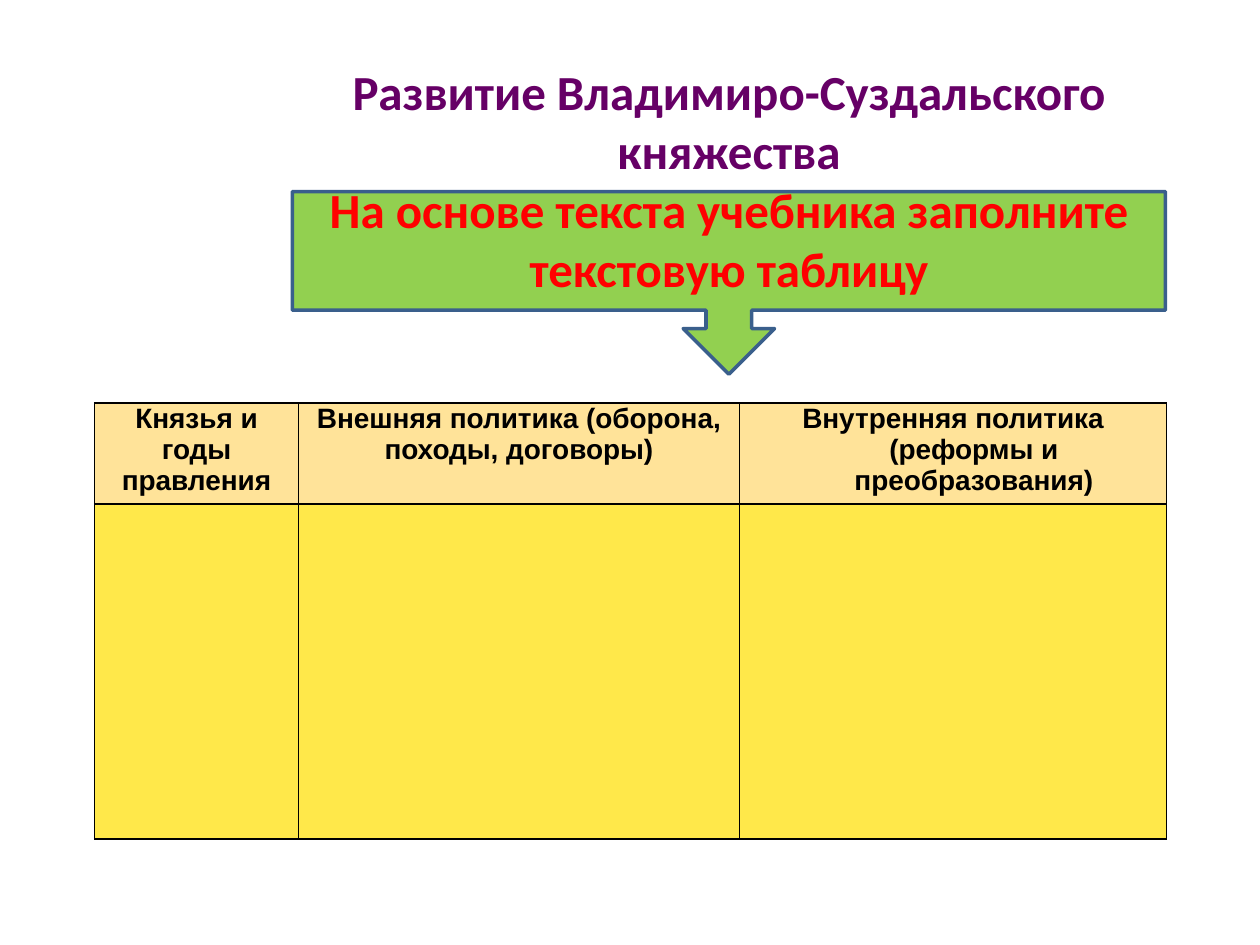
from pptx import Presentation
from pptx import util as u
from pptx.dml.color import RGBColor
from pptx.enum import shapes, text
from pptx.oxml import parse_xml
from pptx.oxml.ns import nsdecls

PURPLE = RGBColor(0x66, 0x00, 0x66)
RED = RGBColor(0xFF, 0x00, 0x00)
GREEN = RGBColor(0x92, 0xD0, 0x50)
BLUE = RGBColor(0x3A, 0x5F, 0x8C)
BLACK = RGBColor(0x00, 0x00, 0x00)
PEACH = RGBColor(0xFF, 0xE3, 0x99)
YELLOW = RGBColor(0xFF, 0xE8, 0x4A)

WIDTH, HEIGHT = 10, 7.5
COLUMNS, ROWS = 100, 75  # grid of the slide


class SlideBuilder:
    """Holds the style and the current slide; lengths are grid columns and rows."""

    title_font, table_font = "Calibri", "Arial"
    title_size, table_size = 28, 16

    def __init__(self, presentation):
        self.column = presentation.slide_width / COLUMNS
        self.row = presentation.slide_height / ROWS
        self.slide = presentation.slides.add_slide(presentation.slide_layouts[5])

    def box(self, left, top, width, height):
        return (round(left * self.column), round(top * self.row),
                round(width * self.column), round(height * self.row))

    def fill_paragraph(self, paragraph, words, font, size, color):
        paragraph.text = words
        paragraph.alignment = text.PP_ALIGN.CENTER
        paragraph.font.name = font
        paragraph.font.size = u.Pt(size)
        paragraph.font.bold = True
        paragraph.font.color.rgb = color

    def callout(self, *place):
        shape = self.slide.shapes.add_shape(
            shapes.MSO_SHAPE.DOWN_ARROW_CALLOUT, *self.box(*place))
        shape.shadow.inherit = False
        shape.fill.solid()
        shape.fill.fore_color.rgb = GREEN
        shape.line.color.rgb = BLUE
        shape.line.width = u.Pt(2)

    def title(self, lines, *place):
        title = self.slide.shapes.title
        title.left, title.top, title.width, title.height = self.box(*place)
        frame = title.text_frame
        frame.word_wrap = True
        frame.auto_size = text.MSO_AUTO_SIZE.SHAPE_TO_FIT_TEXT
        frame.vertical_anchor = text.MSO_ANCHOR.TOP
        for index, (words, color) in enumerate(lines):
            paragraph = frame.add_paragraph() if index else frame.paragraphs[0]
            self.fill_paragraph(paragraph, words, self.title_font,
                                self.title_size, color)
        # Bring the title in front of the callout
        title.element.getparent().append(title.element)

    def borders(self, cell):
        properties = cell._tc.get_or_add_tcPr()
        for position, side in enumerate(("lnL", "lnR", "lnT", "lnB")):
            properties.insert(position, parse_xml(
                f'<a:{side} {nsdecls("a")} w="{u.Pt(1)}"><a:solidFill>'
                f'<a:srgbClr val="{BLACK}"/></a:solidFill></a:{side}>'))

    def table(self, headings, widths, heights, *place):
        table = self.slide.shapes.add_table(
            len(heights), len(widths), *self.box(*place)).table
        for column, width in zip(table.columns, widths):
            column.width = round(width * self.column)
        for row, height in zip(table.rows, heights):
            row.height = round(height * self.row)
        for row, fill in zip(table.rows, (PEACH, YELLOW)):
            for cell in row.cells:
                cell.fill.solid()
                cell.fill.fore_color.rgb = fill
                cell.margin_left = cell.margin_right = u.Inches(0.06)
                cell.margin_top = cell.margin_bottom = 0
                self.borders(cell)
        for cell, lines in zip(table.rows[0].cells, headings):
            frame = cell.text_frame
            for index, words in enumerate(lines):
                paragraph = frame.add_paragraph() if index else frame.paragraphs[0]
                self.fill_paragraph(paragraph, words, self.table_font,
                                    self.table_size, BLACK)
        return table

    def hanging_indent(self, paragraph, columns):
        properties = paragraph._p.get_or_add_pPr()
        properties.set("marL", str(round(columns * self.column)))
        properties.set("indent", str(round(-columns * self.column)))


def main():
    presentation = Presentation()
    presentation.slide_width = u.Inches(WIDTH)
    presentation.slide_height = u.Inches(HEIGHT)
    builder = SlideBuilder(presentation)

    # Task callout with the heading over it
    builder.callout(23.2, 15.2, 69.3, 14.5)
    builder.title([
        ("Развитие Владимиро-Суздальского княжества", PURPLE),
        ("На основе текста учебника заполните текстовую таблицу", RED),
    ], 23.2, 4.4, 69.3, 19.9)

    # Table to be filled in
    headings = [
        ["Князья и годы", "правления"],
        ["Внешняя политика (оборона, походы, договоры)"],
        ["Внутренняя политика (реформы и преобразования)"],
    ]
    table = builder.table(headings, (16.2, 35, 33.9), (7.7, 26.6),
                          7.5, 32, 85.1, 34.3)
    builder.hanging_indent(table.cell(0, 2).text_frame.paragraphs[0], 3.3)

    presentation.save("out.pptx")


if __name__ == "__main__":
    main()
